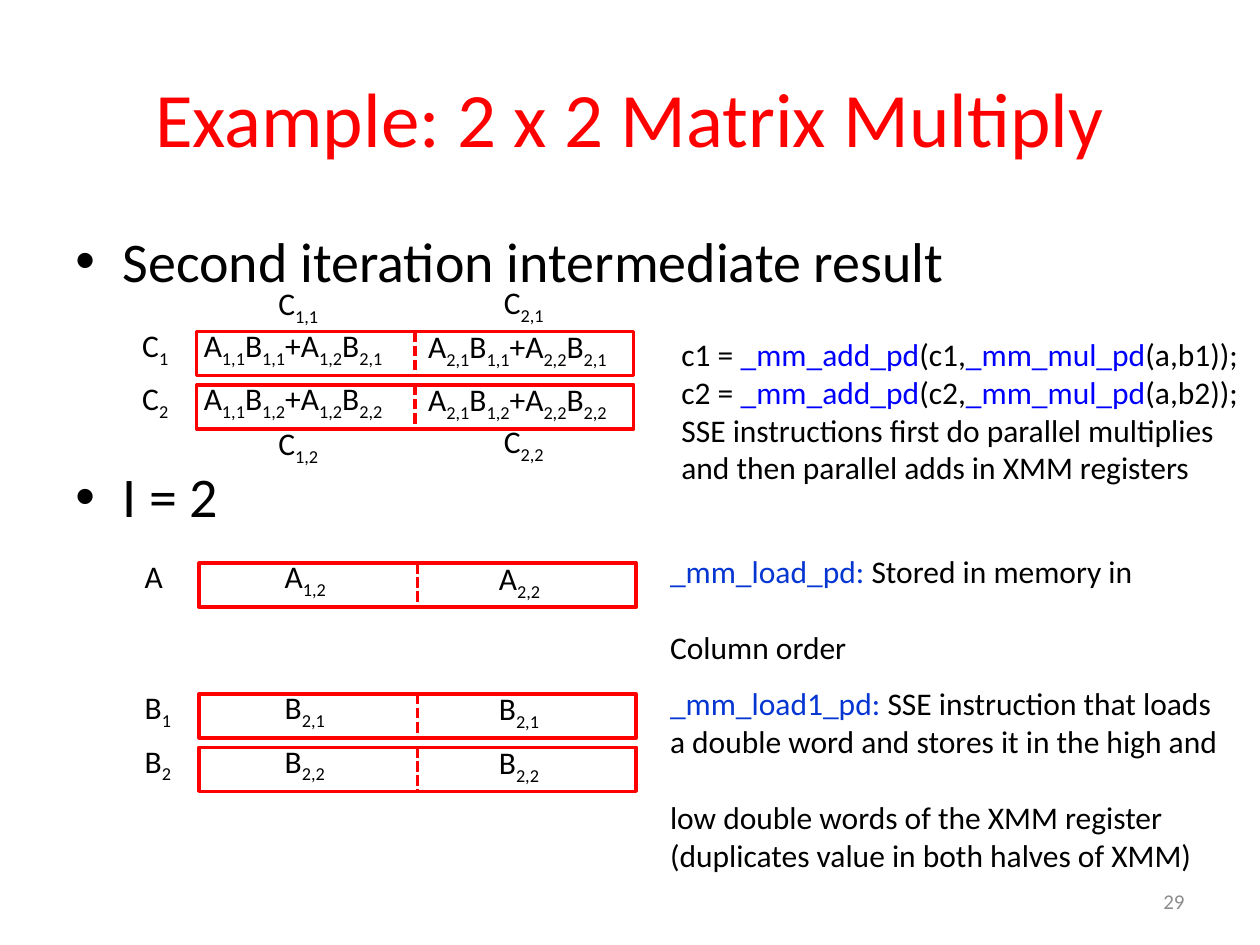
"""Build the slide on the second iteration of a 2 x 2 matrix multiply."""
from itertools import groupby

from lxml import etree
from pptx import Presentation
from pptx.dml import color
from pptx.enum import dml, shapes, text
from pptx.oxml import ns
from pptx.util import Pt


class Theme:
    font = "Calibri"
    red = "FF0000"
    black = "000000"
    intrinsic = "0000FF"
    load = "0536D2"
    grey = "8C8C8C"
    title, body, label, number = 44, 32, 18, 12


TITLE = "Example: 2 x 2 Matrix Multiply"
BULLETS = [("Second iteration intermediate result", 0), ("I = 2", 96)]
PAGE = "29"

# name, left cell, right cell
REGISTERS = [
    dict(left=112.4, top=189.4, cells=(-3, 125.2), width=138, rows=[
        ("C1", "A1,1B1,1+A1,2B2,1", "A2,1B1,1+A2,2B2,1"),
        ("C2", "A1,1B1,2+A1,2B2,2", "A2,1B1,2+A2,2B2,2")]),
    dict(left=113.8, top=321.8, cells=(41.8, 164.2), width=40, rows=[
        ("A", "A1,2", "A2,2")]),
    dict(left=113.8, top=396.5, cells=(41.8, 164.2), width=40, rows=[
        ("B1", "B2,1", "B2,1"),
        ("B2", "B2,2", "B2,2")]),
]
RESULTS = [("C1,1", 152, 159), ("C1,2", 152, 239),
           ("C2,1", 280.8, 158.4), ("C2,2", 280.8, 237.6)]


def intrinsic_line(target, factor):
    return [(f"{target} = ", Theme.black), ("_mm_add_pd", Theme.intrinsic),
            (f"({target},", Theme.black), ("_mm_mul_pd", Theme.intrinsic),
            (f"(a,{factor}));", Theme.black)]


def plain(line):
    return [(line, Theme.black)]


# box, lines, indexes of lines set one line lower
NOTES = [
    ((382.3, 187.9, 335.5, 94.5),
     [intrinsic_line("c1", "b1"), intrinsic_line("c2", "b2"),
      plain("SSE instructions first do parallel multiplies"),
      plain("and then parallel adds in XMM registers")], ()),
    ((375.8, 311.8, 281.5, 72),
     [[("_mm_load_pd: ", Theme.load), ("Stored in memory in", Theme.black)],
      plain("Column order")], (1,)),
    ((375.8, 387.4, 330.5, 116),
     [[("_mm_load1_pd: ", Theme.load), ("SSE instruction that loads", Theme.black)],
      plain("a double word and stores it in the high and"),
      plain("low double words of the XMM register"),
      plain("(duplicates value in both halves of XMM)")], (2,)),
]

ROW_WIDTH, ROW_HEIGHT, ROW_PITCH = 249.8, 25.2, 30.5
LABEL_INDENT, LABEL_RISE, RIGHT_DROP, LABEL_HEIGHT = 38.2, 6.8, 0.7, 29
LINE_GAP = 21.8


def rgb(value):
    return color.RGBColor.from_string(value)


def add_frame(slide, box, wrap=False, anchor=text.MSO_ANCHOR.TOP):
    frame = slide.shapes.add_textbox(*map(Pt, box)).text_frame
    frame.word_wrap = wrap
    frame.vertical_anchor = anchor
    return frame


def add_run(paragraph, words, size, tint=Theme.black):
    run = paragraph.add_run()
    run.text = words
    run.font.name, run.font.size = Theme.font, Pt(size)
    run.font.color.rgb = rgb(tint)
    return run


def add_line(slide, box, words, size, tint, align):
    frame = add_frame(slide, box, True, text.MSO_ANCHOR.MIDDLE)
    frame.paragraphs[0].alignment = align
    add_run(frame.paragraphs[0], words, size, tint)


def add_symbol(slide, symbol, left, top, width=40):
    paragraph = add_frame(slide, (left, top, width, LABEL_HEIGHT)).paragraphs[0]
    for is_index, letters in groupby(symbol, lambda c: c.isdigit() or c == ","):
        run = add_run(paragraph, "".join(letters), Theme.label)
        if is_index:
            run._r.get_or_add_rPr().set("baseline", "-25000")


def add_register(slide, left, top):
    group = slide.shapes.add_group_shape()
    frame = group.shapes.add_shape(shapes.MSO_SHAPE.RECTANGLE,
                                   *map(Pt, (left, top, ROW_WIDTH, ROW_HEIGHT)))
    frame.shadow.inherit = False
    frame.fill.background()
    middle = left + ROW_WIDTH / 2
    divider = group.shapes.add_connector(
        shapes.MSO_CONNECTOR.STRAIGHT,
        *map(Pt, (middle, top, middle, top + ROW_HEIGHT)))
    etree.SubElement(divider._element.spPr, ns.qn("a:effectLst"))
    for edge in (frame, divider):
        edge.line.color.rgb = rgb(Theme.red)
        edge.line.width = Pt(2)
    divider.line.dash_style = dml.MSO_LINE.SQUARE_DOT


def add_registers(slide, left, top, cells, width, rows):
    for index, (name, first, second) in enumerate(rows):
        row_top = top + index * ROW_PITCH
        label_top = row_top - LABEL_RISE
        add_register(slide, left, row_top)
        add_symbol(slide, name, left - LABEL_INDENT, label_top, 31)
        add_symbol(slide, first, left + cells[0], label_top, width)
        add_symbol(slide, second, left + cells[1], label_top + RIGHT_DROP, width)


def add_bullets(slide):
    frame = add_frame(slide, (36, 126, 648, 214.6), True)
    for index, (words, gap) in enumerate(BULLETS):
        paragraph = frame.add_paragraph() if index else frame.paragraphs[0]
        paragraph.space_before = Pt(gap)
        properties = paragraph._p.get_or_add_pPr()
        properties.set("marL", str(Pt(27)))
        properties.set("indent", str(-Pt(27)))
        etree.SubElement(properties, ns.qn("a:buFont")).set("typeface", "Arial")
        etree.SubElement(properties, ns.qn("a:buChar")).set("char", "•")
        add_run(paragraph, words, Theme.body)


def add_note(slide, box, lines, lowered):
    frame = add_frame(slide, box)
    for index, line in enumerate(lines):
        paragraph = frame.add_paragraph() if index else frame.paragraphs[0]
        if index in lowered:
            paragraph.space_before = Pt(LINE_GAP)
        for words, tint in line:
            add_run(paragraph, words, Theme.label, tint)


def main():
    deck = Presentation()
    deck.slide_width, deck.slide_height = Pt(720), Pt(540)
    slide = deck.slides.add_slide(deck.slide_layouts[6])
    add_line(slide, (36, 21.6, 648, 90), TITLE, Theme.title, Theme.red,
             text.PP_ALIGN.CENTER)
    add_bullets(slide)
    for register in REGISTERS:
        add_registers(slide, **register)
    for symbol, left, top in RESULTS:
        add_symbol(slide, symbol, left, top)
    for note in NOTES:
        add_note(slide, *note)
    add_line(slide, (516, 500.5, 168, 28.8), PAGE, Theme.number, Theme.grey,
             text.PP_ALIGN.RIGHT)
    deck.save("out.pptx")


if __name__ == "__main__":
    main()
